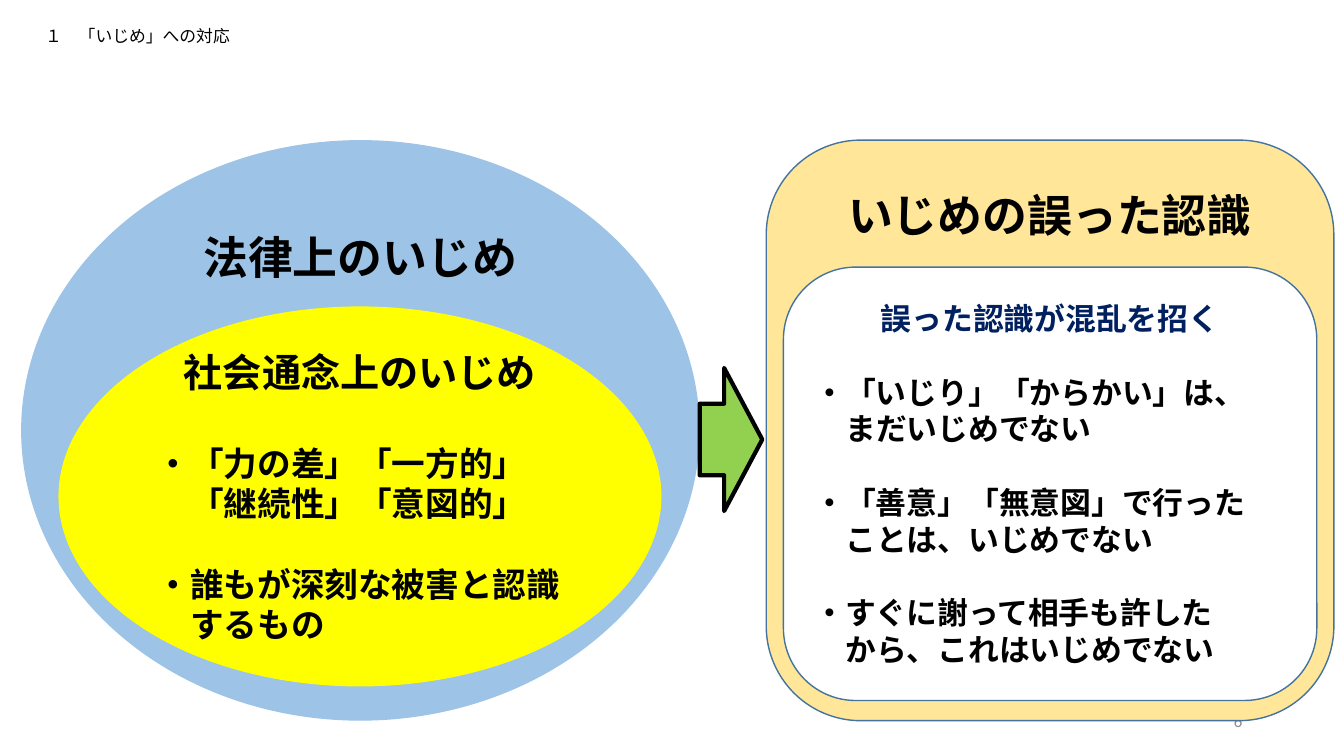
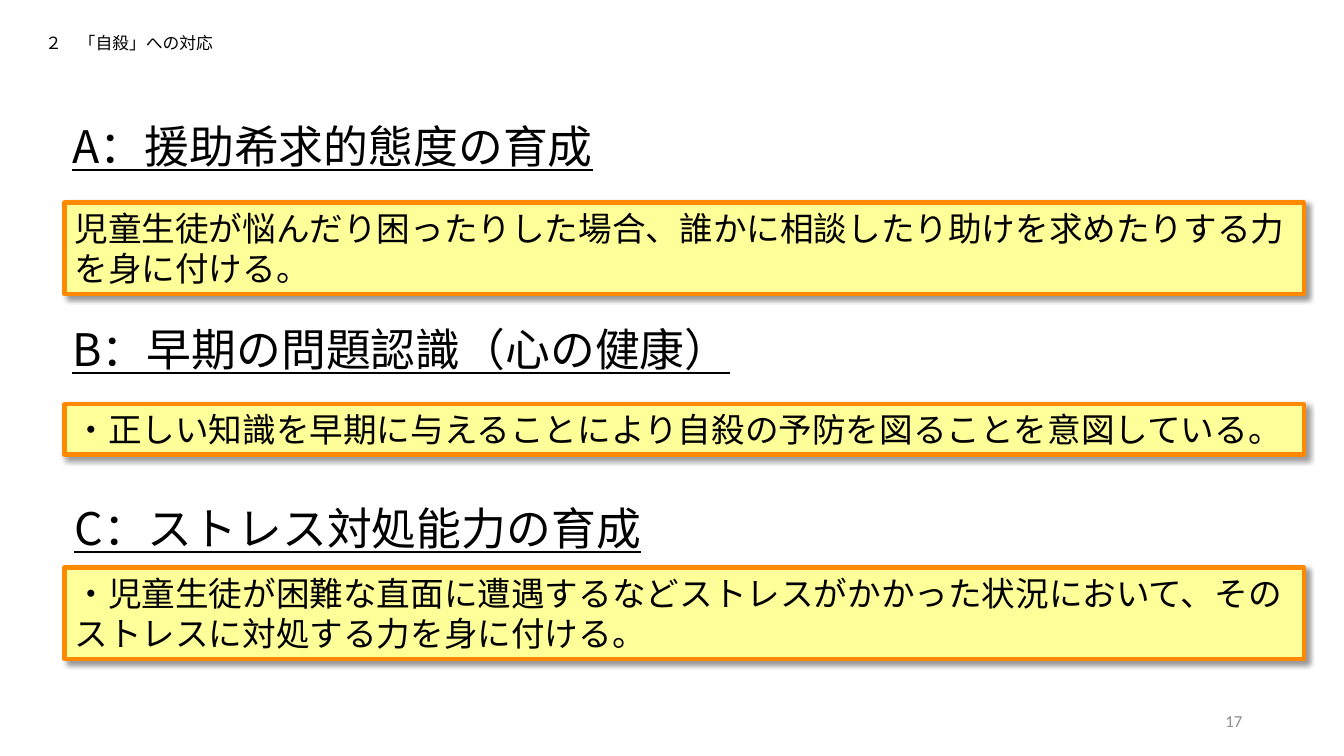
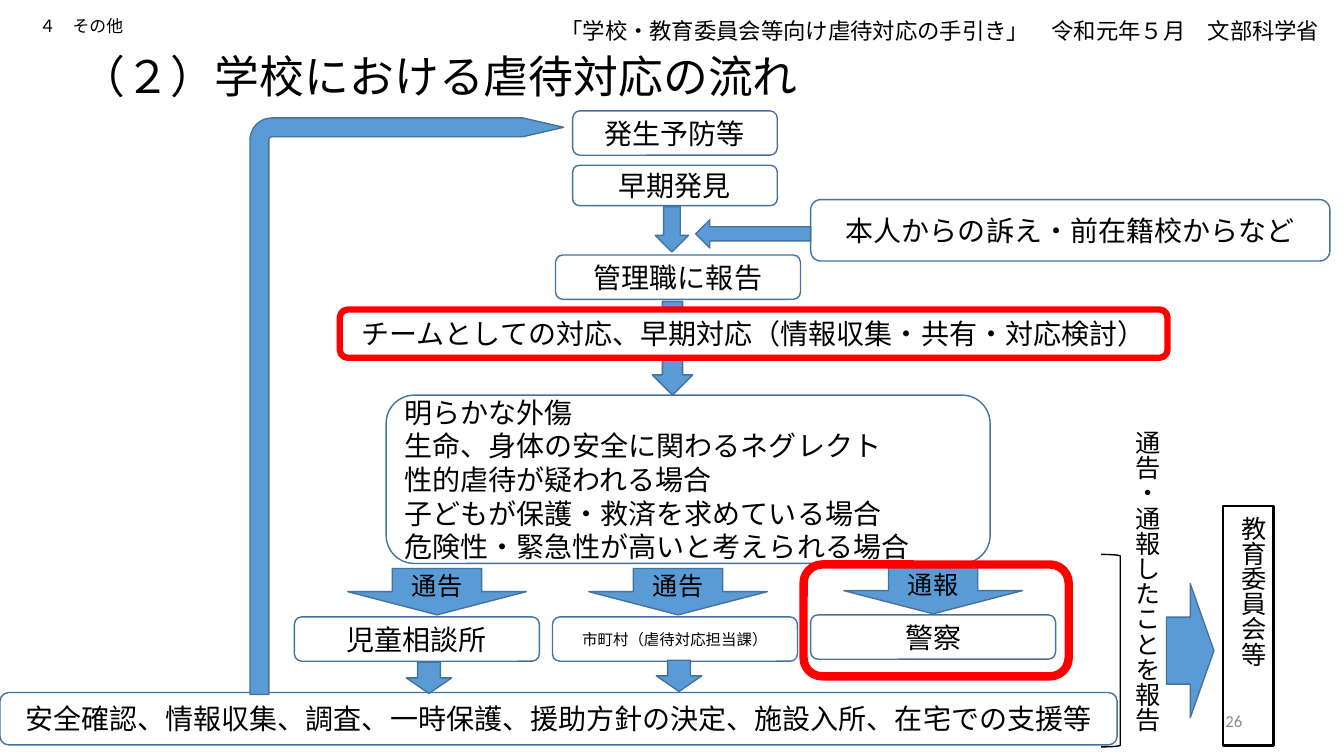
"""Builds three slides on school guidance with one shared style."""
from lxml import etree
from pptx import Presentation, util as u
from pptx.dml import color
from pptx.enum import shapes, text
from pptx.oxml import ns

KIND = shapes.MSO_SHAPE
MID = text.MSO_ANCHOR.MIDDLE
LOW = text.MSO_ANCHOR.BOTTOM
MITTE = text.PP_ALIGN.CENTER
RIGHT = text.PP_ALIGN.RIGHT


def px(n):
    return u.Emu(n * 9144)


def rgb(code):
    return color.RGBColor.from_string(code)


class Deck:
    FONT = "Noto Sans CJK JP"
    INK, NAVY, GRAY, WHITE = "000000", "002060", "8C8C8C", "FFFFFF"
    EDGE, BLUE, RED = "43739E", "5B9BD5", "FF0000"
    PITCH = 1.2

    def __init__(self):
        self.prs = Presentation()
        self.prs.slide_width, self.prs.slide_height = px(1333), px(750)
        self.page = None

    def slide(self, head, box, num):
        self.page = self.prs.slides.add_slide(self.prs.slide_layouts[6])
        self.label(box, head, 12, anchor=LOW, pitch=1.08)
        self.label((942, 695, 300, 40), num, 12, anchor=MID, align=RIGHT,
                   font="Calibri", ink=self.GRAY)

    def label(self, box, words, size, **style):
        item = self.page.shapes.add_textbox(*map(px, box))
        self.letter(item, [(words, {})], size=size, **style)

    def shape(self, kind, box, fill=None, line=None, wide=1, adj=()):
        item = self.page.shapes.add_shape(kind, *map(px, box))
        item.shadow.inherit = False
        for i, part in enumerate(adj):
            item.adjustments[i] = part
        if fill:
            item.fill.solid()
            item.fill.fore_color.rgb = rgb(fill)
        else:
            item.fill.background()
        if line:
            item.line.color.rgb = rgb(line)
            item.line.width = u.Pt(wide)
        else:
            item.line.fill.background()
        return item

    def arrow(self, box, kind=KIND.DOWN_ARROW, adj=()):
        return self.shape(kind, box, self.BLUE, self.EDGE, adj=adj)

    def step(self, box, words, size=20, fill=None, line=EDGE, wide=1):
        item = self.shape(KIND.ROUNDED_RECTANGLE, box, fill, line, wide)
        self.letter(item, [(words, {})], size=size, anchor=MID, align=MITTE)

    def note(self, box, words):
        item = self.shape(KIND.RECTANGLE, box, "FFFF99", "FF8900", 3)
        glow = item._element.spPr.find(ns.qn("a:effectLst"))
        cast = etree.SubElement(glow, ns.qn("a:outerShdw"), blurRad="50800",
                                dist="38100", dir="2700000", algn="tl",
                                rotWithShape="0")
        tint = etree.SubElement(cast, ns.qn("a:srgbClr"), val=self.INK)
        etree.SubElement(tint, ns.qn("a:alpha"), val="40000")
        self.letter(item, [(words, {})], size=24)

    def letter(self, item, paras, anchor=text.MSO_ANCHOR.TOP, top=5,
               vert=False, **style):
        frame = item.text_frame
        form = {"word_wrap": True, "vertical_anchor": anchor,
                "margin_top": px(top), "margin_bottom": px(5)}
        for key, val in form.items():
            setattr(frame, key, val)
        if vert:
            frame._txBody.bodyPr.set("vert", "eaVert")
        for i, (words, own) in enumerate(paras):
            para = frame.add_paragraph() if i else frame.paragraphs[0]
            self.fill(para, words, **{**style, **own})

    def fill(self, para, words, size, ink=INK, font=FONT, bold=False,
             under=False, align=text.PP_ALIGN.LEFT, gap=0, pitch=PITCH):
        para.text = words
        form = {"alignment": align, "space_before": u.Pt(gap),
                "line_spacing": u.Pt(round(size * pitch, 1))}
        for key, val in form.items():
            setattr(para, key, val)
        if "\v" in words:
            hang = u.Pt(size)
            prop = para._p.get_or_add_pPr()
            prop.set("marL", str(hang))
            prop.set("indent", str(-hang))
        form = {"size": u.Pt(size), "name": font, "bold": bold,
                "underline": under}
        for run in para.runs:
            for key, val in form.items():
                setattr(run.font, key, val)
            run.font.color.rgb = rgb(ink)
            etree.SubElement(run._r.get_or_add_rPr(), ns.qn("a:ea"),
                             typeface=font)


def bully(deck):
    deck.slide("１　「いじめ」への対応", (35, 24, 367, 26), "6")
    law = deck.shape(KIND.OVAL, (21, 139, 673, 576), "9DC3E6")
    deck.letter(law, [("法律上のいじめ", {})], size=32, bold=True, align=MITTE)
    norm = deck.shape(KIND.OVAL, (58, 304, 598, 377), "FFFF00")
    deck.letter(norm, [
        ("社会通念上のいじめ", {"size": 28, "align": MITTE}),
        ("・「力の差」「一方的」\v「継続性」「意図的」", {"gap": 34}),
        ("・誰もが深刻な被害と認識\vするもの", {"gap": 29}),
    ], size=24, bold=True, anchor=MID)
    myth = deck.shape(KIND.ROUNDED_RECTANGLE, (760, 139, 563, 576),
                      "FFE699", deck.EDGE)
    deck.letter(myth, [("いじめの誤った認識", {})], size=32, bold=True,
                align=MITTE, top=20)
    card = deck.shape(KIND.ROUNDED_RECTANGLE, (777, 265, 529, 430),
                      deck.WHITE, deck.EDGE)
    deck.letter(card, [
        ("誤った認識が混乱を招く", {"ink": deck.NAVY, "align": MITTE, "gap": 0}),
        ("・「いじり」「からかい」は、\vまだいじめでない", {}),
        ("・「善意」「無意図」で行った\vことは、いじめでない", {}),
        ("・すぐに謝って相手も許した\vから、これはいじめでない", {}),
    ], size=22, bold=True, anchor=MID, gap=26)
    deck.shape(KIND.RIGHT_ARROW, (694, 365, 62, 142), "92D050", deck.INK, 3,
               (0.5, 0.61))


def care(deck):
    deck.slide("２　「自殺」への対応", (35, 23, 406, 34), "17")
    for left, top, head, low, high, words in (
        (62, 113, "A：援助希求的態度の育成", 201, 91,
         "児童生徒が悩んだり困ったりした場合、誰かに相談したり助けを求めたりする力を身に付ける。"),
        (62, 314, "B：早期の問題認識（心の健康）", 401, 50,
         "・正しい知識を早期に与えることにより自殺の予防を図ることを意図している。"),
        (64, 492, "C：ストレス対処能力の育成", 563, 91,
         "・児童生徒が困難な直面に遭遇するなどストレスがかかった状況において、そのストレスに対処する力を身に付ける。"),
    ):
        deck.label((left, top, 1107, 64), head, 32, under=True)
        deck.note((64, low, 1229, high), words)


def flow(deck):
    deck.slide("４　その他", (29, 14, 364, 27), "26")
    deck.label((546, 12, 787, 37),
               "「学校・教育委員会等向け虐待対応の手引き」　令和元年５月　文部科学省", 16)
    deck.label((70, 43, 849, 64), "（２）学校における虐待対応の流れ", 32)
    deck.arrow((647, 299, 40, 93))
    deck.step((337, 307, 821, 48),
              "チームとしての対応、早期対応（情報収集・共有・対応検討）",
              fill=deck.WHITE, line=deck.RED, wide=4.5)
    deck.arrow((650, 205, 33, 45))
    deck.arrow((690, 218, 114, 28), KIND.LEFT_ARROW)
    for box, words, size in (
        ((568, 110, 203, 44), "発生予防等", 20),
        ((568, 164, 203, 40), "早期発見", 20),
        ((804, 198, 515, 61), "本人からの訴え・前在籍校からなど", 20),
        ((551, 253, 243, 44), "管理職に報告", 20),
        ((292, 612, 243, 44), "児童相談所", 20),
        ((548, 612, 243, 44), "市町村（虐待対応担当課）", 11),
        ((804, 610, 243, 44), "警察", 20),
    ):
        deck.step(box, words, size)
    case = deck.shape(KIND.ROUNDED_RECTANGLE, (383, 392, 599, 167),
                      line=deck.EDGE)
    deck.letter(case, [(words, {}) for words in (
        "明らかな外傷", "生命、身体の安全に関わるネグレクト",
        "性的虐待が疑われる場合", "子どもが保護・救済を求めている場合",
        "危険性・緊急性が高いと考えられる場合")], size=20, anchor=MID)
    for left, top, words in ((345, 564, "通告"), (584, 564, "通告"),
                             (837, 563, "通報")):
        item = deck.arrow((left, top, 177, 46))
        deck.letter(item, [(words, {})], size=18, anchor=MID, align=MITTE)
    deck.step((0, 687, 1108, 52),
              "安全確認、情報収集、調査、一時保護、援助方針の決定、施設入所、在宅での支援等",
              fill=deck.WHITE)
    for left, top in ((403, 657), (651, 655)):
        deck.arrow((left, top, 45, 31))
    deck.arrow((248, 117, 311, 572), KIND.BENT_ARROW,
               (0.09, 0.03, 0.13, 0.07))
    deck.shape(KIND.RIGHT_BRACKET, (1092, 550, 19, 191), line=deck.INK)
    deck.label((1108, 417, 50, 333), "通告・通報したことを報告", 18, vert=True)
    deck.arrow((1157, 579, 47, 133), KIND.RIGHT_ARROW)
    board = deck.shape(KIND.RECTANGLE, (1213, 502, 50, 238),
                       line=deck.INK, wide=2)
    deck.letter(board, [("教育委員会等", {})], size=18, vert=True)
    deck.shape(KIND.ROUNDED_RECTANGLE, (797, 560, 263, 111),
               line=deck.RED, wide=6)


def main():
    deck = Deck()
    for build in (bully, care, flow):
        build(deck)
    deck.prs.save("out.pptx")


if __name__ == "__main__":
    main()
